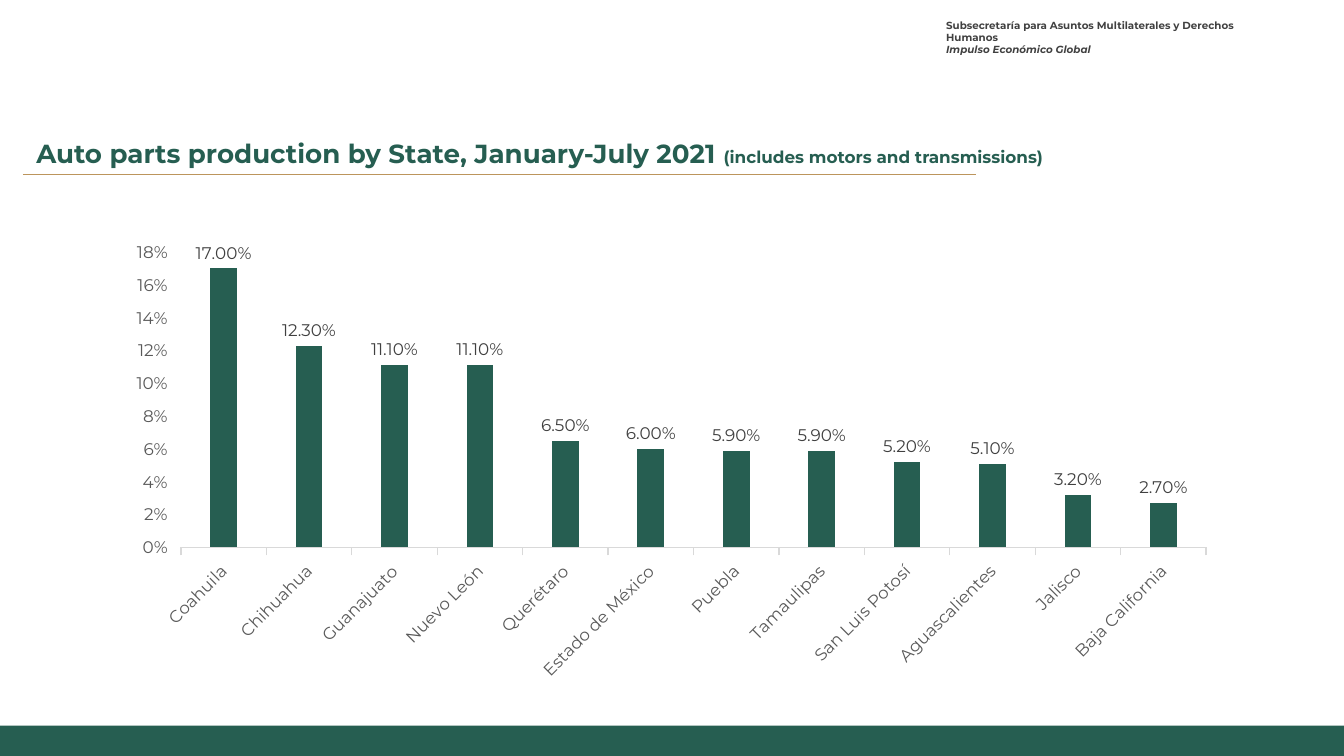
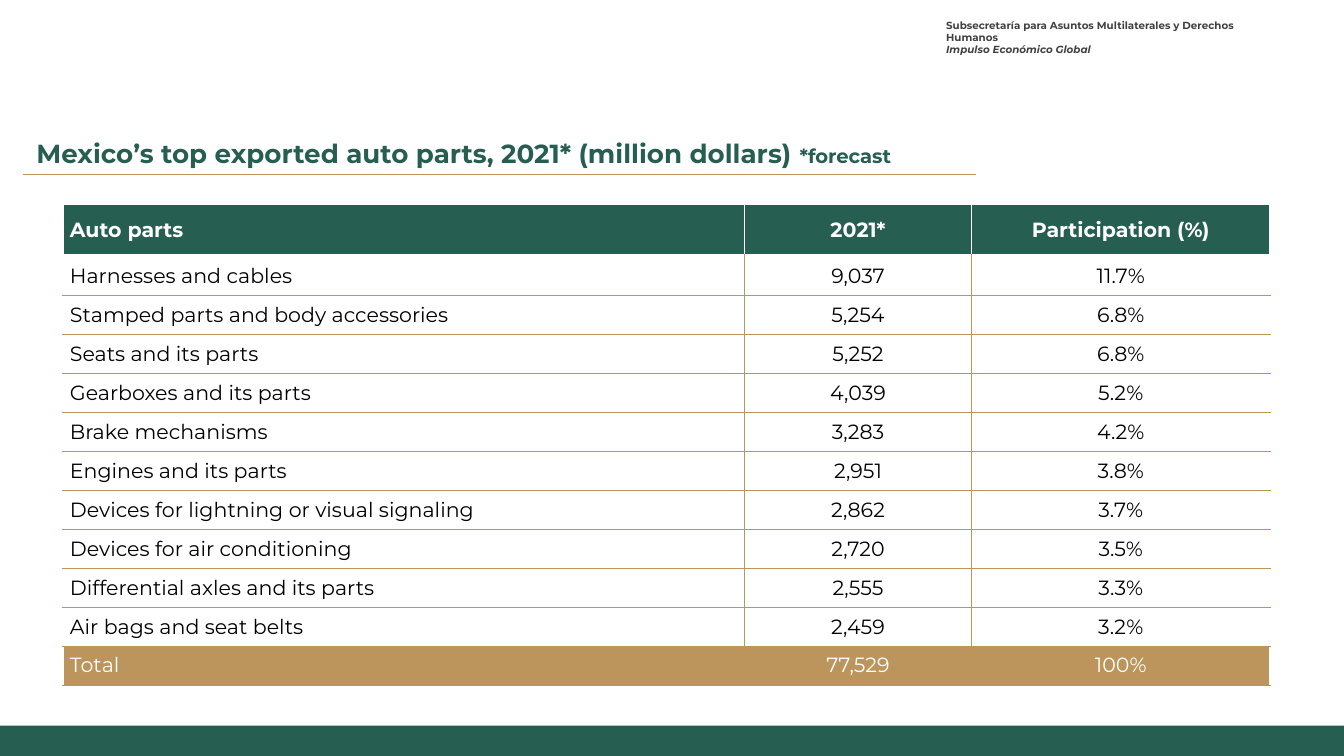
import pptx
import pptx.chart.data
import pptx.dml.color
import pptx.enum.chart
import pptx.enum.shapes
import pptx.enum.text
import pptx.oxml
import pptx.oxml.ns
import pptx.util
from pptx.util import Inches

GREEN, GOLD, WHITE = "265E51", "BC955C", "FFFFFF"
TITLES = [
    ("Auto parts production by State, January-July 2021 ", "(includes motors and transmissions)", 9),
    ("Mexico’s top exported auto parts, 2021* (million dollars) ", "*forecast", 10.5),
]
STATES = {
    "Coahuila": 0.17, "Chihuahua": 0.123, "Guanajuato": 0.111, "Nuevo León": 0.111,
    "Querétaro": 0.065, "Estado de México": 0.06, "Puebla": 0.059, "Tamaulipas": 0.059,
    "San Luis Potosí": 0.052, "Aguascalientes": 0.051, "Jalisco": 0.032, "Baja California": 0.027,
}
EXPORTS = [
    ("Auto parts", "2021*", "Participation (%)"),
    ("Harnesses and cables", "9,037", "11.7%"),
    ("Stamped parts and body accessories", "5,254", "6.8%"),
    ("Seats and its parts", "5,252", "6.8%"),
    ("Gearboxes and its parts", "4,039", "5.2%"),
    ("Brake mechanisms", "3,283", "4.2%"),
    ("Engines and its parts", "2,951", "3.8%"),
    ("Devices for lightning or visual signaling", "2,862", "3.7%"),
    ("Devices for air conditioning", "2,720", "3.5%"),
    ("Differential axles and its parts", "2,555", "3.3%"),
    ("Air bags and seat belts", "2,459", "3.2%"),
    ("Total", "77,529", "100%"),
]


def color(value):
    return pptx.dml.color.RGBColor.from_string(value)


def set_font(font, size, value, bold=False):
    font.name = "Montserrat"
    font.size = pptx.util.Pt(size)
    font.bold = bold
    font.color.rgb = color(value)


# Widescreen page, 16 to 9
deck = pptx.Presentation()
deck.slide_width = Inches(10)
deck.slide_height = Inches(10) * 9 // 16

# Shared parts: header, footer band, title and rule
pages = []
for heading, remark, remark_size in TITLES:
    page = deck.slides.add_slide(deck.slide_layouts[5])
    pages.append(page)

    box = page.shapes.add_textbox(Inches(6.98), Inches(0.08), Inches(2.68), Inches(0.35))
    frame = box.text_frame
    frame.word_wrap = True
    frame.margin_left = frame.margin_top = frame.margin_bottom = Inches(0.06)
    frame.margin_right = Inches(0.1)
    frame.text = "Subsecretaría para Asuntos Multilaterales y Derechos Humanos\nImpulso Económico Global"
    for para in frame.paragraphs:
        set_font(para.font, 5.5, "404040", bold=True)
    frame.paragraphs[1].font.italic = True

    band_top = Inches(5.4)
    band = page.shapes.add_shape(
        pptx.enum.shapes.MSO_SHAPE.RECTANGLE, 0, band_top, deck.slide_width, deck.slide_height - band_top)
    band.shadow.inherit = False
    band.fill.solid()
    band.fill.fore_color.rgb = color(GREEN)
    band.line.fill.background()

    title = page.shapes.title
    title.left, title.top, title.width, title.height = [Inches(n) for n in (0.17, 0.97, 9.16, 0.34)]
    title.text_frame.auto_size = pptx.enum.text.MSO_AUTO_SIZE.NONE
    title.text_frame.vertical_anchor = pptx.enum.text.MSO_ANCHOR.TOP
    para = title.text_frame.paragraphs[0]
    para.alignment = pptx.enum.text.PP_ALIGN.LEFT
    for words, size in ((heading, 14), (remark, remark_size)):
        span = para.add_run()
        span.text = words
        set_font(span.font, size, GREEN, bold=True)

    rule = page.shapes.add_connector(
        pptx.enum.shapes.MSO_CONNECTOR.STRAIGHT, Inches(0.17), Inches(1.3), Inches(7.26), Inches(1.3))
    rule.line.color.rgb = color(GOLD)
    rule.line.width = pptx.util.Pt(0.75)
    rule._element.spPr.append(pptx.oxml.parse_xml(
        f'<a:effectLst {pptx.oxml.ns.nsdecls("a")}/>'))

# Slide 1: column chart by state
chart_data = pptx.chart.data.CategoryChartData(number_format="0.00%")
chart_data.categories = list(STATES)
chart_data.add_series("Series 1", list(STATES.values()))
chart = pages[0].shapes.add_chart(
    pptx.enum.chart.XL_CHART_TYPE.COLUMN_CLUSTERED,
    Inches(0.85), Inches(1.73), Inches(8.29), Inches(3.4), chart_data).chart
set_font(chart.font, 9, "000000")
chart.has_legend = False
chart.has_title = False

plot = chart.plots[0]
plot.gap_width, plot.overlap = 219, -27
plot.vary_by_categories = False
columns = plot.series[0]
columns.format.fill.solid()
columns.format.fill.fore_color.rgb = color(GREEN)
labels = columns.data_labels
labels.show_value = True
labels.position = pptx.enum.chart.XL_LABEL_POSITION.OUTSIDE_END
labels.number_format = "0.00%"
labels.number_format_is_linked = False
set_font(labels.font, 9, "404040")

states_axis, share_axis = chart.category_axis, chart.value_axis
for axis in (states_axis, share_axis):
    axis.has_major_gridlines = False
    axis.major_tick_mark = pptx.enum.chart.XL_TICK_MARK.OUTSIDE
    set_font(axis.tick_labels.font, 9, "595959")
states_axis.format.line.color.rgb = color("D9D9D9")
states_axis.format.line.width = pptx.util.Pt(0.75)
slant = states_axis._element.find(pptx.oxml.ns.qn("c:txPr")).find(pptx.oxml.ns.qn("a:bodyPr"))
slant.set("rot", "-2700000")
slant.set("vert", "horz")
share_axis.minimum_scale, share_axis.maximum_scale, share_axis.major_unit = 0, 0.18, 0.02
share_axis.format.line.fill.background()
share_axis.tick_labels.number_format = "0%"
share_axis.tick_labels.number_format_is_linked = False

# Slide 2: export table
last_row, last_column = len(EXPORTS) - 1, 2
table = pages[1].shapes.add_table(
    len(EXPORTS), 3, Inches(0.47), Inches(1.52), Inches(8.98), Inches(3.58)).table
table.horz_banding = False
for column, width in zip(table.columns, (5.07, 1.69, 2.22)):
    column.width = Inches(width)
for i, row in enumerate(table.rows):
    row.height = Inches(0.39 if i == 0 else 0.29)
    for j, cell in enumerate(row.cells):
        cell.text = EXPORTS[i][j]
        cell.vertical_anchor = pptx.enum.text.MSO_ANCHOR.MIDDLE
        cell.margin_left = cell.margin_right = Inches(0.05)
        cell.margin_top = cell.margin_bottom = Inches(0.02)
        para = cell.text_frame.paragraphs[0]
        if j > 0:
            para.alignment = pptx.enum.text.PP_ALIGN.CENTER
        set_font(para.font, 11, WHITE if i in (0, last_row) else "000000", bold=i == 0)

        # Borders come before the fill in the cell properties
        gold, white = (GOLD, 0.5), (WHITE, 1)
        inner = white if i == 0 else gold
        borders = {
            "lnL": white if j == 0 else inner,
            "lnR": white if j == last_column else inner,
            "lnT": white if i == 0 else (WHITE, 3) if i == 1 else gold,
            "lnB": (WHITE, 3) if i == 0 else gold,
        }
        for side, (line_color, points) in borders.items():
            cell._tc.get_or_add_tcPr().append(pptx.oxml.parse_xml(
                f'<a:{side} {pptx.oxml.ns.nsdecls("a")} w="{pptx.util.Pt(points)}">'
                f'<a:solidFill><a:srgbClr val="{line_color}"/></a:solidFill></a:{side}>'))
        if i in (0, last_row):
            cell.fill.solid()
            cell.fill.fore_color.rgb = color(GREEN if i == 0 else "BC955D")
        else:
            cell.fill.background()

deck.save("out.pptx")
